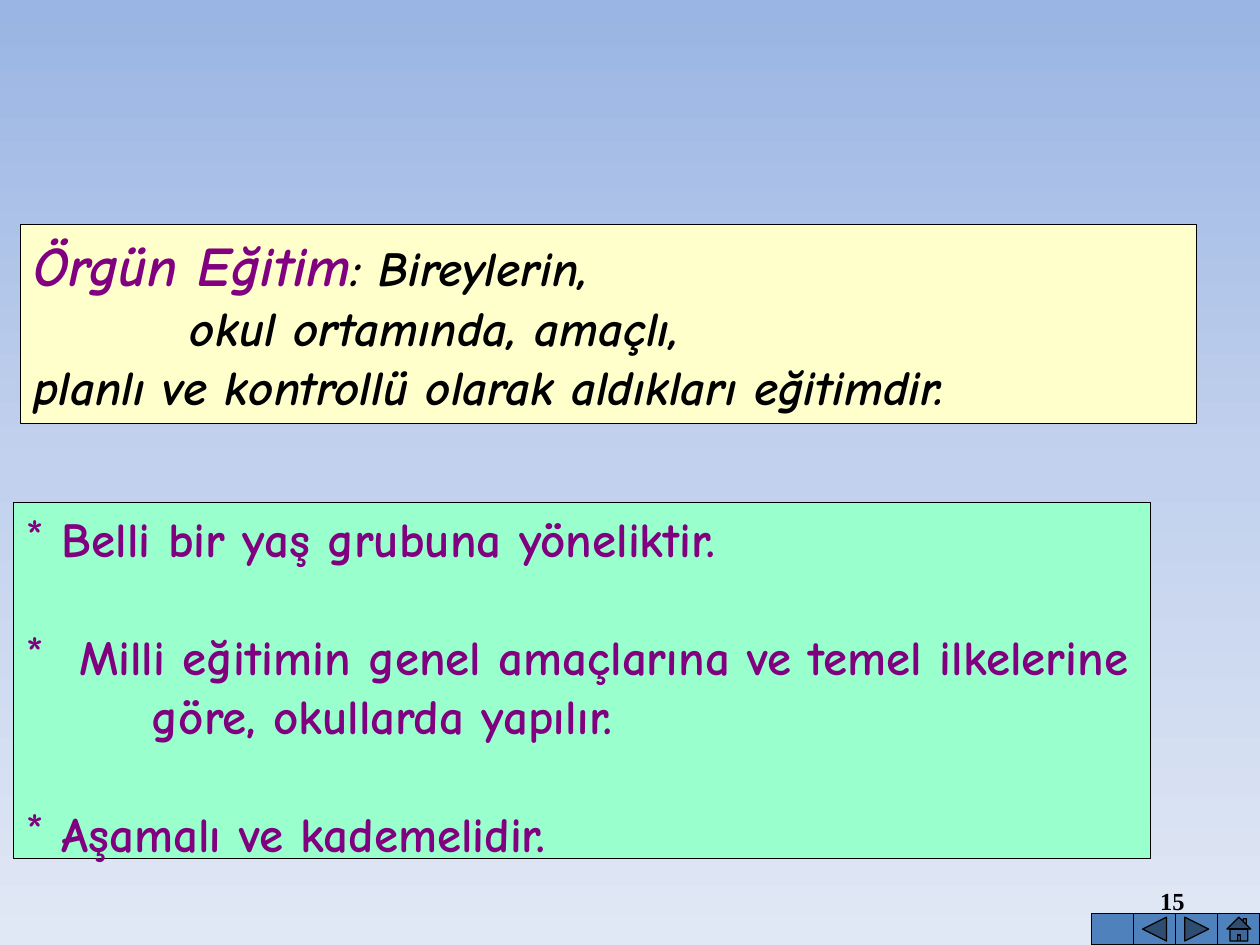
from dataclasses import dataclass

import pptx
import pptx.dml.color
import pptx.enum.shapes
import pptx.enum.text
import pptx.oxml
import pptx.oxml.ns
import pptx.util
from pptx.util import Cm, Pt

HAND_FONT = "Comic Neue"
PURPLE, BLACK = "800080", "000000"
BUTTON = pptx.enum.shapes.MSO_SHAPE
BUTTON_WIDTH, BUTTON_HEIGHT = 0.85, 0.64
SLIDE_WIDTH, SLIDE_HEIGHT = 25.4, 19.05


@dataclass
class Box:
    left: float
    top: float
    width: float
    height: float

    def lengths(self) -> list:
        return [Cm(side) for side in (self.left, self.top, self.width, self.height)]


@dataclass
class Feature:
    text: str
    indent: float
    space_before: float


def colour(hex_value: str) -> pptx.dml.color.RGBColor:
    return pptx.dml.color.RGBColor.from_string(hex_value)


def paint(shape, fill: str) -> None:
    shape.fill.solid()
    shape.fill.fore_color.rgb = colour(fill)
    shape.line.color.rgb = colour(BLACK)
    shape.line.width = Pt(0.75)


def add_run(paragraph, text: str, size: float, ink: str,
            font: str = HAND_FONT, italic: bool = False) -> None:
    run = paragraph.add_run()
    run.text = text
    run.font.name = font
    run.font.size = Pt(size)
    run.font.bold = True
    run.font.italic = italic
    run.font.color.rgb = colour(ink)


def add_element(parent, tag: str, **attributes: str):
    child = pptx.oxml.ns.qn(tag)
    element = parent.makeelement(child, attributes)
    parent.append(element)
    return element


def set_background(slide, stops: list) -> None:
    """Fill the background with a vertical gradient of (percent, colour) stops."""
    fill = slide.background.fill
    fill.gradient()
    fill.gradient_angle = 270
    stop_list = slide.background._cSld.find(".//" + pptx.oxml.ns.qn("a:gsLst"))
    for old_stop in list(stop_list):
        stop_list.remove(old_stop)
    for percent, hex_value in stops:
        stop = add_element(stop_list, "a:gs", pos=str(percent * 1000))
        add_element(stop, "a:srgbClr", val=hex_value)


def add_definition(slide, box: Box) -> None:
    definition = slide.shapes.add_textbox(*box.lengths())
    paint(definition, "FFFFCC")
    frame = definition.text_frame
    frame.word_wrap = True
    frame.auto_size = pptx.enum.text.MSO_AUTO_SIZE.SHAPE_TO_FIT_TEXT
    opening = frame.paragraphs[0]
    add_run(opening, "Örgün Eğitim", 32, PURPLE, italic=True)
    add_run(opening, ": Bireylerin,", 28, BLACK, italic=True)
    setting = frame.add_paragraph()
    setting._p.get_or_add_pPr().set("marL", str(Cm(3.16)))
    add_run(setting, "okul ortamında, amaçlı,", 28, BLACK, italic=True)
    closing = frame.add_paragraph()
    add_run(closing, "planlı ve kontrollü olarak aldıkları eğitimdir.", 28, BLACK, italic=True)


def add_features(body, box: Box, features: list) -> None:
    body.left, body.top, body.width, body.height = box.lengths()
    paint(body, "99FFCC")
    frame = body.text_frame
    frame.word_wrap = True
    frame.auto_size = pptx.enum.text.MSO_AUTO_SIZE.SHAPE_TO_FIT_TEXT
    for number, feature in enumerate(features):
        paragraph = frame.add_paragraph() if number else frame.paragraphs[0]
        properties = paragraph._p.get_or_add_pPr()
        properties.set("marL", str(Cm(feature.indent)))
        properties.set("indent", str(-Cm(feature.indent)))
        bullet_colour = add_element(properties, "a:buClr")
        add_element(bullet_colour, "a:srgbClr", val=PURPLE)
        add_element(properties, "a:buFont", typeface=HAND_FONT)
        add_element(properties, "a:buChar", char="*")
        tabs = add_element(properties, "a:tabLst")
        add_element(tabs, "a:tab", pos=str(Cm(2.54)), algn="l")
        paragraph.space_before = Pt(feature.space_before)
        add_run(paragraph, feature.text, 28, PURPLE)


def add_slide_number(slide, box: Box) -> None:
    number = slide.shapes.add_textbox(*box.lengths())
    frame = number.text_frame
    frame.word_wrap = True
    frame.vertical_anchor = pptx.enum.text.MSO_ANCHOR.MIDDLE
    paragraph = frame.paragraphs[0]
    paragraph.alignment = pptx.enum.text.PP_ALIGN.RIGHT
    add_run(paragraph, "15", 14, BLACK, font="Times New Roman")


def add_navigation(slide, kinds: list) -> None:
    """Line the buttons up against the bottom right corner."""
    start = SLIDE_WIDTH - len(kinds) * BUTTON_WIDTH
    for position, kind in enumerate(kinds):
        box = Box(start + position * BUTTON_WIDTH, SLIDE_HEIGHT - BUTTON_HEIGHT,
                  BUTTON_WIDTH, BUTTON_HEIGHT)
        button = slide.shapes.add_shape(kind, *box.lengths())
        button.shadow.inherit = False
        paint(button, "4F81BD")


def main() -> None:
    deck = pptx.Presentation()
    deck.slide_width, deck.slide_height = Cm(SLIDE_WIDTH), Cm(SLIDE_HEIGHT)
    slide = deck.slides.add_slide(deck.slide_layouts[1])
    unused_title = slide.shapes.title.element
    unused_title.getparent().remove(unused_title)

    set_background(slide, [(0, "9AB5E4"), (50, "C2D1ED"), (100, "E1E8F5")])
    add_slide_number(slide, Box(18.2, 17.65, 5.93, 1.02))
    add_navigation(slide, [BUTTON.ACTION_BUTTON_CUSTOM, BUTTON.ACTION_BUTTON_BACK_OR_PREVIOUS,
                           BUTTON.ACTION_BUTTON_FORWARD_OR_NEXT, BUTTON.ACTION_BUTTON_HOME])
    add_definition(slide, Box(0.42, 4.52, 23.7, 4.02))
    add_features(slide.placeholders[1], Box(0.27, 10.13, 22.92, 7.43), [
        Feature("Belli bir yaş grubuna yöneliktir.", 0.72, 0),
        Feature("Milli eğitimin genel amaçlarına ve temel ilkelerine \tgöre, okullarda yapılır.",
                1.07, 33.7),
        Feature("Aşamalı ve kademelidir.", 0.72, 33.7),
    ])
    deck.save("out.pptx")


if __name__ == "__main__":
    main()
